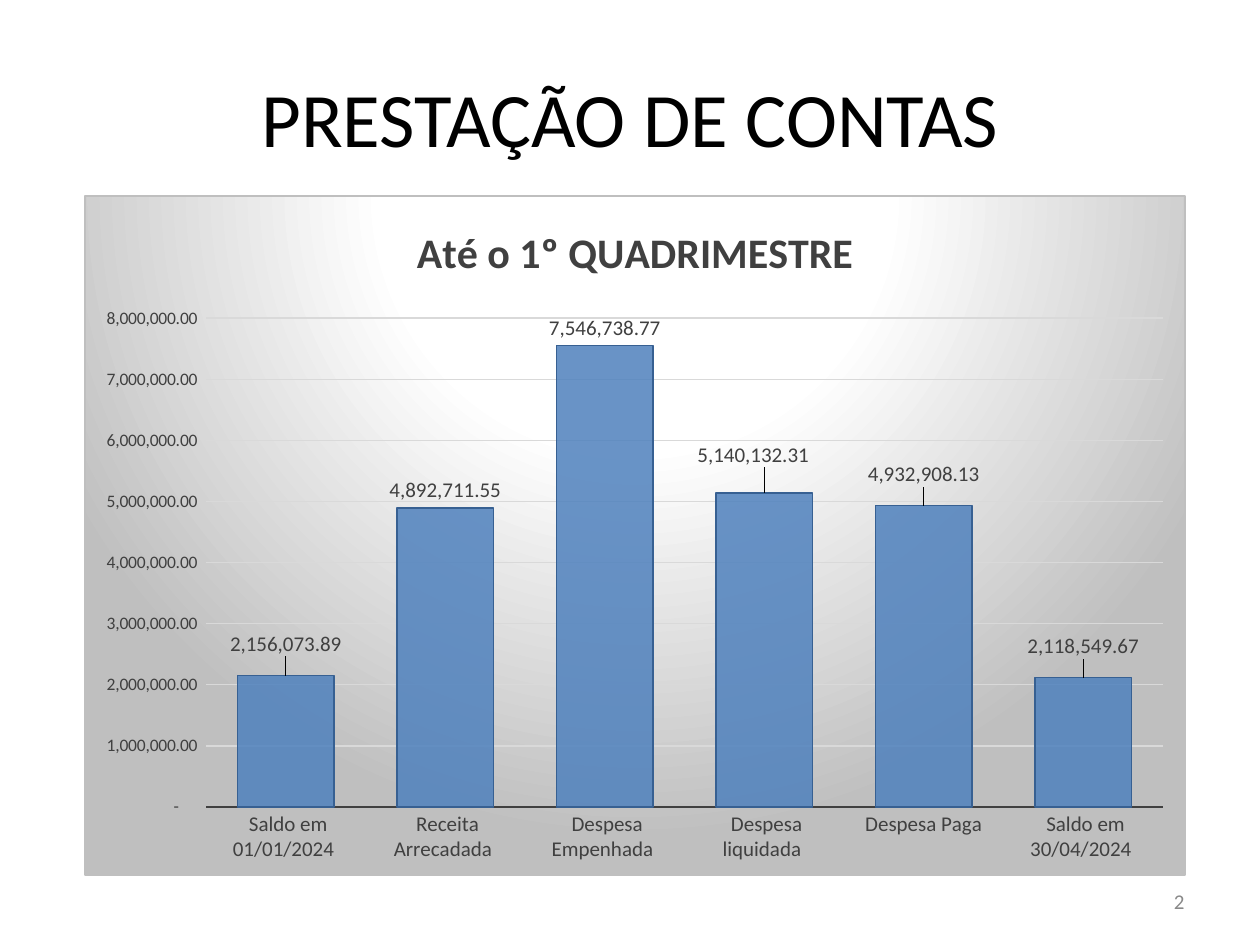
from lxml import etree
from pptx import Presentation
from pptx.chart.data import CategoryChartData
from pptx.dml.color import RGBColor
from pptx.enum.chart import XL_CHART_TYPE, XL_LABEL_POSITION as LabelPos, XL_TICK_MARK as Tick
from pptx.enum.text import MSO_ANCHOR, PP_ALIGN
from pptx.oxml import parse_xml
from pptx.oxml.ns import nsdecls, qn
from pptx.util import Inches, Pt

# Content
TITLE = "PRESTAÇÃO DE CONTAS"
CHART_TITLE = "Até o 1º QUADRIMESTRE"
PAGE = "2"
BALANCES = [
    (" Saldo em 01/01/2024 ", 2156073.89),
    (" Receita Arrecadada ", 4892711.55),
    (" Despesa Empenhada ", 7546738.77),
    (" Despesa liquidada ", 5140132.31),
    (" Despesa Paga ", 4932908.13),
    (" Saldo em 30/04/2024 ", 2118549.67),
]
# Labels moved from their place: bar index -> share of chart width, height
LABEL_SHIFTS = {0: (0, -0.02), 3: (-0.01, -0.03), 4: (0, -0.02), 5: (0, -0.02)}
PLOT_AREA = {"x": 0.11, "y": 0.18, "w": 0.87, "h": 0.72}
BACKGROUND = [(0, "FFFFFF"), (39, "FFFFFF"), (100, "BFBFBF")]
MONEY = '_(* #,##0.00_);_(* \\(#,##0.00\\);_(* "-"??_);_(@_)'
FONT = "Calibri"
DARK = "404040"


def style(font, size, color, bold=False):
    font.name, font.size, font.bold = FONT, Pt(size), bold
    font.color.rgb = RGBColor.from_string(color)


def outline(line, color, width):
    line.color.rgb = RGBColor.from_string(color)
    line.width = Pt(width)


def write(tf, text, size, color, align):
    tf.word_wrap = True
    tf.vertical_anchor = MSO_ANCHOR.MIDDLE
    p = tf.paragraphs[0]
    p.alignment = align
    r = p.add_run()
    r.text = text
    style(r.font, size, color)


def manual_layout(values, modes=""):
    parts = "".join(f'<c:{k} val="{v}"/>' for k, v in values.items())
    return parse_xml(f'<c:layout {nsdecls("c")}><c:manualLayout>{modes}{parts}'
                     '</c:manualLayout></c:layout>')


prs = Presentation()
prs.slide_width, prs.slide_height = Inches(10), Inches(7.5)
s = prs.slides.add_slide(prs.slide_layouts[5])

# Title and page number
title = s.shapes.title
title.left, title.top, title.width, title.height = map(Inches, (0.5, 0.3, 9, 1.25))
write(title.text_frame, TITLE, 44, "000000", PP_ALIGN.CENTER)
page = s.shapes.add_textbox(Inches(7.17), Inches(6.95), Inches(2.33), Inches(0.4))
write(page.text_frame, PAGE, 12, "898989", PP_ALIGN.RIGHT)

# Chart
data = CategoryChartData(number_format=MONEY)
data.categories = [name for name, _ in BALANCES]
data.add_series("Series 1", [value for _, value in BALANCES])
chart = s.shapes.add_chart(XL_CHART_TYPE.COLUMN_CLUSTERED, Inches(0.67), Inches(1.55),
                           Inches(8.74), Inches(5.4), data).chart
style(chart.font, 10, "000000")
chart.has_legend = False
chart.has_title = True
r = chart.chart_title.text_frame.paragraphs[0].add_run()
r.text = CHART_TITLE
style(r.font, 24, DARK, bold=True)
chart.chart_title.include_in_layout = False

# Axes
cat, val = chart.category_axis, chart.value_axis
for axis, size in ((cat, 12), (val, 10)):
    axis.major_tick_mark = axis.minor_tick_mark = Tick.NONE
    style(axis.tick_labels.font, size, DARK)
outline(cat.format.line, DARK, 1.5)
val.format.line.fill.background()
outline(val.major_gridlines.format.line, "D9D9D9", 0.75)
val.minimum_scale, val.maximum_scale, val.major_unit = 0, 8000000, 1000000
val.tick_labels.number_format = MONEY
val.tick_labels.number_format_is_linked = False

# Bars
plot = chart.plots[0]
plot.gap_width = 65
plot.vary_by_categories = False
bars = plot.series[0]
bars.format.fill.solid()
bars.format.fill.fore_color.rgb = RGBColor.from_string("4F81BD")
bar_color = bars.format.fill._xPr.find(".//" + qn("a:srgbClr"))
etree.SubElement(bar_color, qn("a:alpha")).set("val", "85000")
outline(bars.format.line, "376092", 0.75)

# Value labels
labels = bars.data_labels
labels.show_value = True
labels.position = LabelPos.OUTSIDE_END
labels.number_format = MONEY
labels.number_format_is_linked = False
style(labels.font, 12, DARK)
for i, (dx, dy) in LABEL_SHIFTS.items():
    label = bars.points[i].data_label
    label.position = LabelPos.OUTSIDE_END
    style(label.font, 12, DARK)
    idx = labels._element.find(f'{qn("c:dLbl")}/{qn("c:idx")}[@val="{i}"]')
    idx.addnext(manual_layout({"x": dx, "y": dy}))

# Plot area place
area = chart._chartSpace.chart.plotArea
for old in area.findall(qn("c:layout")):
    area.remove(old)
area.insert(0, manual_layout(PLOT_AREA, '<c:layoutTarget val="inner"/>'
                             '<c:xMode val="edge"/><c:yMode val="edge"/>'))

# Chart background and border
stops = "".join(f'<a:gs pos="{pos * 1000}"><a:srgbClr val="{color}"/></a:gs>'
                for pos, color in BACKGROUND)
chart._chartSpace.chart.addnext(parse_xml(
    f'<c:spPr {nsdecls("c", "a")}><a:gradFill><a:gsLst>{stops}</a:gsLst>'
    '<a:path path="circle"><a:fillToRect l="50000" t="-80000" r="50000" b="180000"/></a:path>'
    '</a:gradFill><a:ln w="9525"><a:solidFill><a:srgbClr val="BFBFBF"/></a:solidFill></a:ln>'
    '</c:spPr>'))

prs.save("out.pptx")
